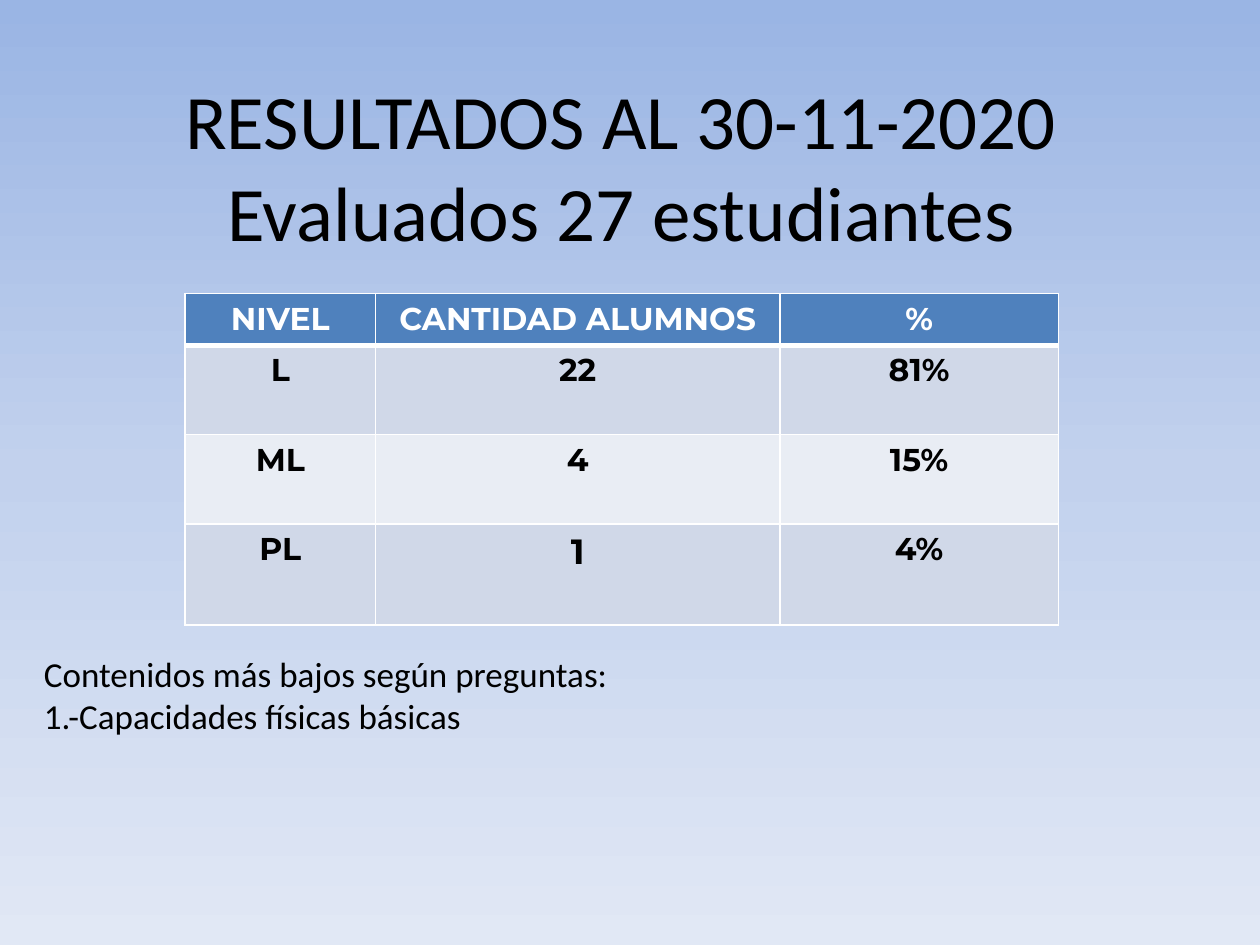
from copy import deepcopy
from dataclasses import dataclass

from lxml import etree
from pptx import Presentation
from pptx.dml.color import RGBColor
from pptx.enum.text import MSO_ANCHOR, MSO_AUTO_SIZE, PP_ALIGN
from pptx.oxml.ns import qn
from pptx.util import Inches, Pt

CENTER, LEFT = PP_ALIGN.CENTER, PP_ALIGN.LEFT
MIDDLE = MSO_ANCHOR.MIDDLE
GROW = MSO_AUTO_SIZE.SHAPE_TO_FIT_TEXT
TITLE_ONLY = 5


@dataclass(frozen=True)
class Theme:
    text_font: str = "Calibri"
    table_font: str = "Montserrat"
    title_size: int = 44
    note_size: int = 20
    table_size: int = 18
    emphasis_size: int = 20
    ink: str = "000000"
    white: str = "FFFFFF"
    header: str = "4F81BD"
    bands: tuple = ("D0D8E8", "E9EDF4")
    background: tuple = ((0, "9AB5E4"), (0.5, "C2D1ED"), (1, "E1E8F5"))
    thin: int = 1
    thick: int = 3


THEME = Theme()
TITLE = ("RESULTADOS AL 30-11-2020", "Evaluados 27 estudiantes")
RESULTS = (
    ("NIVEL", "CANTIDAD ALUMNOS", "%"),
    ("L", "22", "81%"),
    ("ML", "4", "15%"),
    ("PL", "1", "4%"),
)
EMPHASIZED_CELL = (3, 1)
COLUMN_WIDTHS = (1.51, 3.21, 2.21)
ROW_HEIGHTS = (0.41, 0.71, 0.71, 0.8)
NOTES = ("Contenidos más bajos según preguntas:", "1.-Capacidades físicas básicas")


def add_run(paragraph, text, font, size, color, bold=False):
    run = paragraph.add_run()
    run.text = text
    run.font.name = font
    run.font.size = Pt(size)
    run.font.bold = bold
    run.font.color.rgb = RGBColor.from_string(color)


def set_background(slide):
    """Fill the slide with a top-to-bottom gradient, one stop per theme colour."""
    fill = slide.background.fill
    fill.gradient()
    fill.gradient_angle = 270
    stop_list = slide.element.find(".//" + qn("a:gsLst"))
    while len(stop_list) < len(THEME.background):
        stop_list.append(deepcopy(stop_list[0]))
    for stop, (position, color) in zip(fill.gradient_stops, THEME.background):
        stop.position = position
        stop.color.rgb = RGBColor.from_string(color)


def add_title(slide):
    title = slide.shapes.title
    title.left, title.top = Inches(0.43), Inches(0.44)
    title.width, title.height = Inches(9), Inches(1.73)
    title.text_frame.vertical_anchor = MIDDLE
    paragraph = title.text_frame.paragraphs[0]
    paragraph.alignment = CENTER
    for index, line in enumerate(TITLE):
        if index:
            paragraph.add_line_break()
        add_run(paragraph, line, THEME.text_font, THEME.title_size, THEME.ink)


def set_borders(cell, top, bottom):
    """Draw white borders; the side lines are thin, top and bottom are in points."""
    properties = cell._tc.get_or_add_tcPr()
    widths = {"a:lnL": THEME.thin, "a:lnR": THEME.thin, "a:lnT": top, "a:lnB": bottom}
    for index, (tag, width) in enumerate(widths.items()):
        line = etree.Element(qn(tag), w=str(Pt(width)))
        fill = etree.SubElement(line, qn("a:solidFill"))
        etree.SubElement(fill, qn("a:srgbClr"), val=THEME.white)
        properties.insert(index, line)


def format_cell(cell, row, column, text):
    is_header = row == 0
    fill = THEME.header if is_header else THEME.bands[(row - 1) % 2]
    cell.fill.solid()
    cell.fill.fore_color.rgb = RGBColor.from_string(fill)
    set_borders(
        cell,
        top=THEME.thick if row == 1 else THEME.thin,
        bottom=THEME.thick if is_header else THEME.thin,
    )
    emphasized = (row, column) == EMPHASIZED_CELL
    size = THEME.emphasis_size if emphasized else THEME.table_size
    color = THEME.white if is_header else THEME.ink
    paragraph = cell.text_frame.paragraphs[0]
    paragraph.alignment = CENTER
    add_run(paragraph, text, THEME.table_font, size, color, bold=True)


def add_results_table(slide):
    table = slide.shapes.add_table(
        len(ROW_HEIGHTS), len(COLUMN_WIDTHS), Inches(1.47), Inches(2.33),
        Inches(sum(COLUMN_WIDTHS)), Inches(sum(ROW_HEIGHTS)),
    ).table
    for column, width in zip(table.columns, COLUMN_WIDTHS):
        column.width = Inches(width)
    for row, height in zip(table.rows, ROW_HEIGHTS):
        row.height = Inches(height)
    for row, texts in enumerate(RESULTS):
        for column, text in enumerate(texts):
            format_cell(table.cell(row, column), row, column, text)


def add_notes_text(slide):
    box = slide.shapes.add_textbox(Inches(0.25), Inches(5.13), Inches(9.37), Inches(0.77))
    frame = box.text_frame
    frame.word_wrap = True
    frame.auto_size = GROW
    for index, line in enumerate(NOTES):
        paragraph = frame.add_paragraph() if index else frame.paragraphs[0]
        paragraph.alignment = LEFT
        add_run(paragraph, line, THEME.text_font, THEME.note_size, THEME.ink)


def main():
    presentation = Presentation()
    presentation.slide_width, presentation.slide_height = Inches(10), Inches(7.5)
    slide = presentation.slides.add_slide(presentation.slide_layouts[TITLE_ONLY])
    set_background(slide)
    add_title(slide)
    add_results_table(slide)
    add_notes_text(slide)
    presentation.save("out.pptx")


if __name__ == "__main__":
    main()
